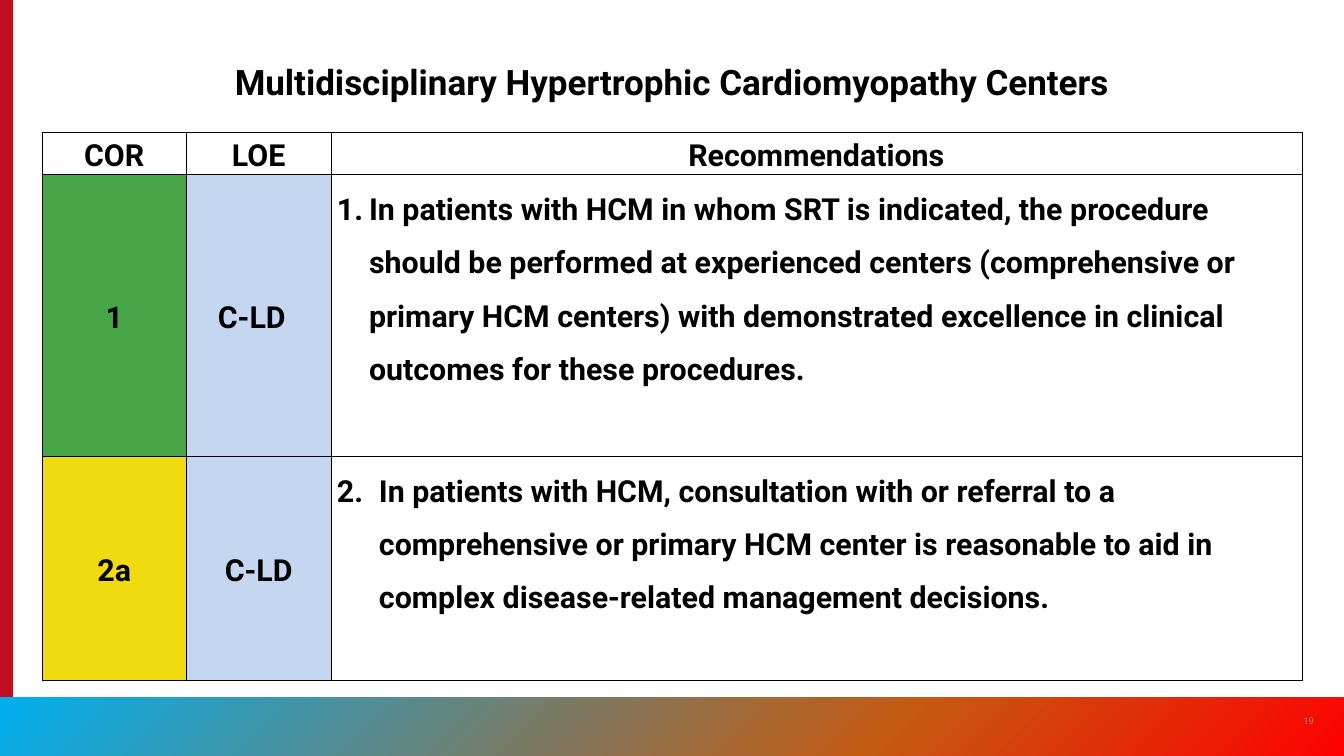
from lxml import etree
from pptx import Presentation
from pptx.dml.color import RGBColor
from pptx.enum.shapes import MSO_SHAPE
from pptx.enum.text import MSO_ANCHOR, PP_ALIGN
from pptx.oxml.ns import qn
from pptx.util import Cm, Pt

RECTANGLE = MSO_SHAPE.RECTANGLE
TOP, MIDDLE = MSO_ANCHOR.TOP, MSO_ANCHOR.MIDDLE
CENTER, LEFT = PP_ALIGN.CENTER, PP_ALIGN.LEFT

FONT = "Roboto"
BLACK, WHITE, GRAY, RED = "000000", "FFFFFF", "8A8B8A", "C10E21"
GREEN, YELLOW, PALE_BLUE = "45A547", "F0DA10", "C4D6F0"
FOOTER_STOPS = [(0, "00B0F0"), (66, "C55A11"), (100, "FF0000")]
SLIDE_WIDTH, SLIDE_HEIGHT = Cm(40.64), Cm(22.86)
FOOTER_HEIGHT = Cm(1.78)
CELL_MARGIN = Cm(0.18)

HEADINGS = ["COR", "LOE", "Recommendations"]
RECOMMENDATIONS = [
    ("1", GREEN, "C-LD", Cm(0.6), Cm(0.97),
     "In patients with HCM in whom SRT is indicated, the procedure should be performed "
     "at experienced centers (comprehensive or primary HCM centers) with demonstrated "
     "excellence in clinical outcomes for these procedures."),
    ("2a", YELLOW, "C-LD", CELL_MARGIN, Cm(1.27),
     "In patients with HCM, consultation with or referral to a comprehensive or primary "
     "HCM center is reasonable to aid in complex disease-related management decisions."),
]
COLUMN_WIDTHS = [Cm(4.37), Cm(4.37), Cm(29.36)]
ROW_HEIGHTS = [Cm(1.24), Cm(8.52), Cm(6.77)]


def color(value):
    return RGBColor.from_string(value)


def write(frame, text, size, shade=BLACK, bold=True, align=CENTER, spacing=None):
    frame.text = text
    paragraph = frame.paragraphs[0]
    paragraph.alignment = align
    if spacing:
        paragraph.line_spacing = spacing
    font = paragraph.runs[0].font
    font.name, font.size, font.bold = FONT, Pt(size), bold
    font.color.rgb = color(shade)
    return paragraph


def add_band(slide, left, top, width, height, fill):
    band = slide.shapes.add_shape(RECTANGLE, left, top, width, height)
    band.shadow.inherit = False
    band.line.fill.background()
    band.fill.solid()
    band.fill.fore_color.rgb = color(fill)
    return band


def add_footer(slide, left, top, width, height):
    band = add_band(slide, left, top, width, height, RED)
    band.fill.gradient()
    band.fill.gradient_angle = 315
    stops = band.element.spPr.find(qn("a:gradFill")).find(qn("a:gsLst"))
    for stop in list(stops):
        stops.remove(stop)
    for position, shade in FOOTER_STOPS:
        stop = etree.SubElement(stops, qn("a:gs"), pos=str(position * 1000))
        etree.SubElement(stop, qn("a:srgbClr"), val=shade)

    side = Cm(1.22)
    number = slide.shapes.add_textbox(left + width - Cm(1.68), top + Cm(0.1), side, side)
    number.text_frame.word_wrap = True
    number.text_frame.vertical_anchor = MIDDLE
    write(number.text_frame, "19", 8, GRAY, bold=False)


def place_title(slide, left, top, width, height):
    title = slide.shapes.title
    title.left, title.top, title.width, title.height = left, top, width, height
    title.text_frame.vertical_anchor = TOP
    write(title.text_frame, "Multidisciplinary Hypertrophic Cardiomyopathy Centers", 30, spacing=1.0)


def border_cell(cell):
    properties = cell._tc.get_or_add_tcPr()
    for index, edge in enumerate(["a:lnL", "a:lnR", "a:lnT", "a:lnB"]):
        border = etree.Element(qn(edge), w=str(Pt(1)))
        fill = etree.SubElement(border, qn("a:solidFill"))
        etree.SubElement(fill, qn("a:srgbClr"), val=BLACK)
        properties.insert(index, border)


def fill_cell(cell, text, fill=WHITE, anchor=MIDDLE, align=CENTER, spacing=1.15):
    cell.margin_left = cell.margin_right = CELL_MARGIN
    cell.margin_top = cell.margin_bottom = 0
    cell.vertical_anchor = anchor
    cell.fill.solid()
    cell.fill.fore_color.rgb = color(fill)
    border_cell(cell)
    return write(cell.text_frame, text, 26, align=align, spacing=spacing)


def number_paragraph(paragraph, start, indent):
    properties = paragraph._p.get_or_add_pPr()
    properties.set("marL", str(indent))
    properties.set("indent", str(-indent))
    etree.SubElement(properties, qn("a:buFont"), typeface="+mj-lt")
    etree.SubElement(properties, qn("a:buAutoNum"), type="arabicPeriod", startAt=str(start))


def add_recommendations(slide, left, top):
    table = slide.shapes.add_table(
        len(ROW_HEIGHTS), len(COLUMN_WIDTHS), left, top, sum(COLUMN_WIDTHS), sum(ROW_HEIGHTS)
    ).table
    table.first_row = table.horz_banding = False
    for column, width in zip(table.columns, COLUMN_WIDTHS):
        column.width = width
    for row, height in zip(table.rows, ROW_HEIGHTS):
        row.height = height
    for column, heading in enumerate(HEADINGS):
        fill_cell(table.cell(0, column), heading)
    for row, recommendation in enumerate(RECOMMENDATIONS, start=1):
        cor, shade, loe, loe_margin, indent, advice = recommendation
        fill_cell(table.cell(row, 0), cor, shade)
        fill_cell(table.cell(row, 1), loe, PALE_BLUE)
        table.cell(row, 1).margin_right = loe_margin
        paragraph = fill_cell(table.cell(row, 2), advice, anchor=TOP, align=LEFT, spacing=1.5)
        number_paragraph(paragraph, row, indent)


def main():
    presentation = Presentation()
    presentation.slide_width, presentation.slide_height = SLIDE_WIDTH, SLIDE_HEIGHT
    slide = presentation.slides.add_slide(presentation.slide_layouts[5])
    add_band(slide, 0, 0, Cm(0.4), SLIDE_HEIGHT, RED)
    add_footer(slide, 0, SLIDE_HEIGHT - FOOTER_HEIGHT, SLIDE_WIDTH, FOOTER_HEIGHT)
    add_recommendations(slide, Cm(1.27), Cm(4.01))
    place_title(slide, Cm(4.45), Cm(1.7), Cm(31.75), Cm(2.39))
    presentation.save("out.pptx")


if __name__ == "__main__":
    main()
